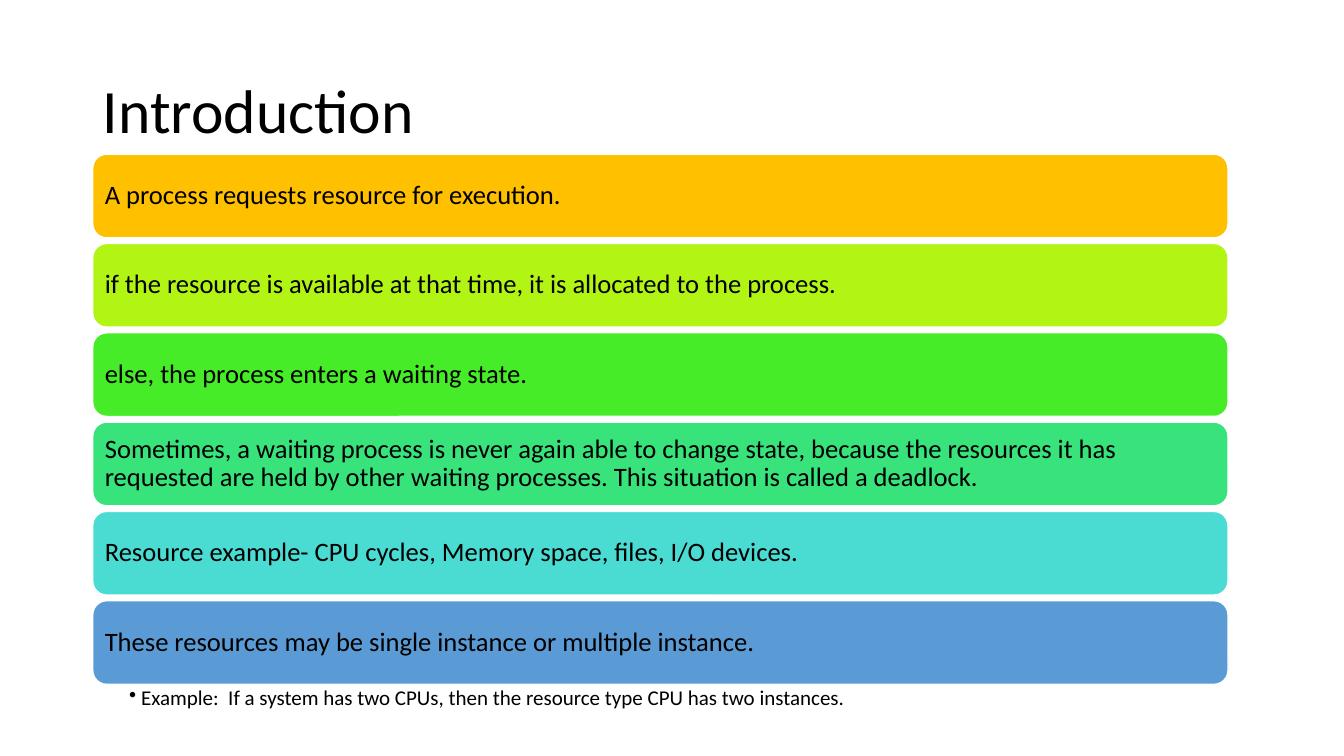
"""Build the introduction slide on deadlocks."""
import pptx
import pptx.dml.color
import pptx.enum.shapes
import pptx.enum.text
import pptx.util
from lxml import etree

Inches, Pt = pptx.util.Inches, pptx.util.Pt
RGBColor = pptx.dml.color.RGBColor
Anchor = pptx.enum.text.MSO_ANCHOR

BLACK = RGBColor(0x00, 0x00, 0x00)
WHITE = RGBColor(0xFF, 0xFF, 0xFF)
AMBER = RGBColor(0xFF, 0xC0, 0x00)
LIME = RGBColor(0xB2, 0xF5, 0x14)
GREEN = RGBColor(0x46, 0xEC, 0x27)
EMERALD = RGBColor(0x39, 0xE3, 0x7B)
TURQUOISE = RGBColor(0x4A, 0xDC, 0xD2)
BLUE = RGBColor(0x5B, 0x9B, 0xD5)

PAGE_WIDTH, PAGE_HEIGHT = Inches(13.33), Inches(7.5)
LEFT, BAR_WIDTH = Inches(0.92), Inches(11.26)
FIRST_ROW, ROW_PITCH, BAR_HEIGHT = Inches(1.53), Inches(0.886), Inches(0.83)

STATEMENTS = [
    ("A process requests resource for execution.", AMBER),
    ("if the resource is available at that time, it is allocated to the process.", LIME),
    ("else, the process enters a waiting state.", GREEN),
    ("Sometimes, a waiting process is never again able to change state, because "
     "the resources it has requested are held by other waiting processes. "
     "This situation is called a deadlock.", EMERALD),
    ("Resource example- CPU cycles, Memory space, files, I/O devices.", TURQUOISE),
    ("These resources may be single instance or multiple instance.", BLUE),
]
EXAMPLE = "Example:  If a system has two CPUs, then the resource type CPU has two instances."


def apply_format(target, values):
    """Set every attribute named in values on target."""
    for name, value in values.items():
        setattr(target, name, value)


def write_text(shape, text, size, anchor, margins):
    """Write one left-aligned paragraph into shape and return it."""
    frame = shape.text_frame
    sides = ("margin_left", "margin_top", "margin_right", "margin_bottom")
    apply_format(frame, {
        "word_wrap": True,
        "auto_size": pptx.enum.text.MSO_AUTO_SIZE.NONE,
        "vertical_anchor": anchor,
        **{side: Inches(margin) for side, margin in zip(sides, margins)},
    })
    para = frame.paragraphs[0]
    apply_format(para, {"alignment": pptx.enum.text.PP_ALIGN.LEFT, "line_spacing": 0.9})
    span = para.add_run()
    span.text = text
    apply_format(span.font, {"name": "Calibri", "size": Pt(size)})
    span.font.color.rgb = BLACK
    return para


def add_title(page, text):
    """Place and format the title placeholder."""
    title = page.shapes.title
    apply_format(title, {"left": LEFT, "top": Inches(0.4),
                         "width": Inches(11.5), "height": Inches(1.45)})
    write_text(title, text, 44, Anchor.MIDDLE, (0.1, 0.05, 0.1, 0.05))


def add_bar(page, row, text, color):
    """Add one rounded statement bar on the given row."""
    bar = page.shapes.add_shape(
        pptx.enum.shapes.MSO_SHAPE.ROUNDED_RECTANGLE,
        LEFT, FIRST_ROW + row * ROW_PITCH, BAR_WIDTH, BAR_HEIGHT)
    bar.shadow.inherit = False
    bar.fill.solid()
    bar.fill.fore_color.rgb = color
    bar.line.color.rgb = WHITE
    bar.line.width = Pt(1)
    write_text(bar, text, 19, Anchor.MIDDLE, (0.08,) * 4)


def add_bullet_note(page, text):
    """Add the bulleted example directly below the last bar."""
    top = FIRST_ROW + (len(STATEMENTS) - 1) * ROW_PITCH + BAR_HEIGHT
    box = page.shapes.add_textbox(LEFT, top, BAR_WIDTH, Inches(0.34))
    para = write_text(box, text, 15, Anchor.TOP, (0.36, 0.03, 0.15, 0.03))
    para.level = 1
    properties = para._p.get_or_add_pPr()
    properties.set("marL", str(Inches(0.12)))
    properties.set("indent", str(-Inches(0.12)))
    bullet = etree.SubElement(properties, pptx.oxml.ns.qn("a:buChar"))
    bullet.set("char", "•")


def main():
    """Build and save the deck."""
    deck = pptx.Presentation()
    apply_format(deck, {"slide_width": PAGE_WIDTH, "slide_height": PAGE_HEIGHT})
    page = deck.slides.add_slide(deck.slide_layouts.get_by_name("Title Only"))
    add_title(page, "Introduction")
    for row, (text, color) in enumerate(STATEMENTS):
        add_bar(page, row, text, color)
    add_bullet_note(page, EXAMPLE)
    deck.save("out.pptx")


if __name__ == "__main__":
    main()
